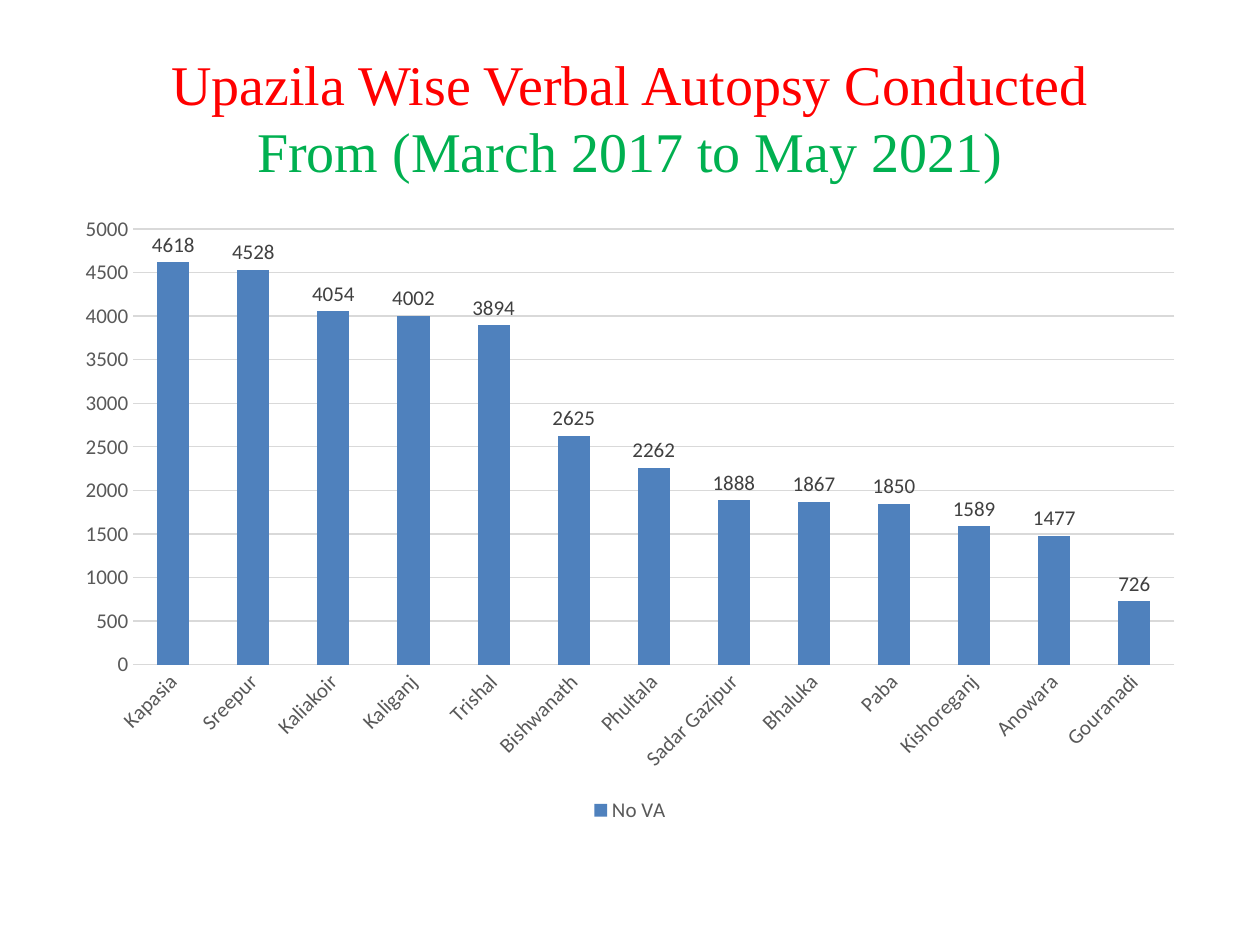
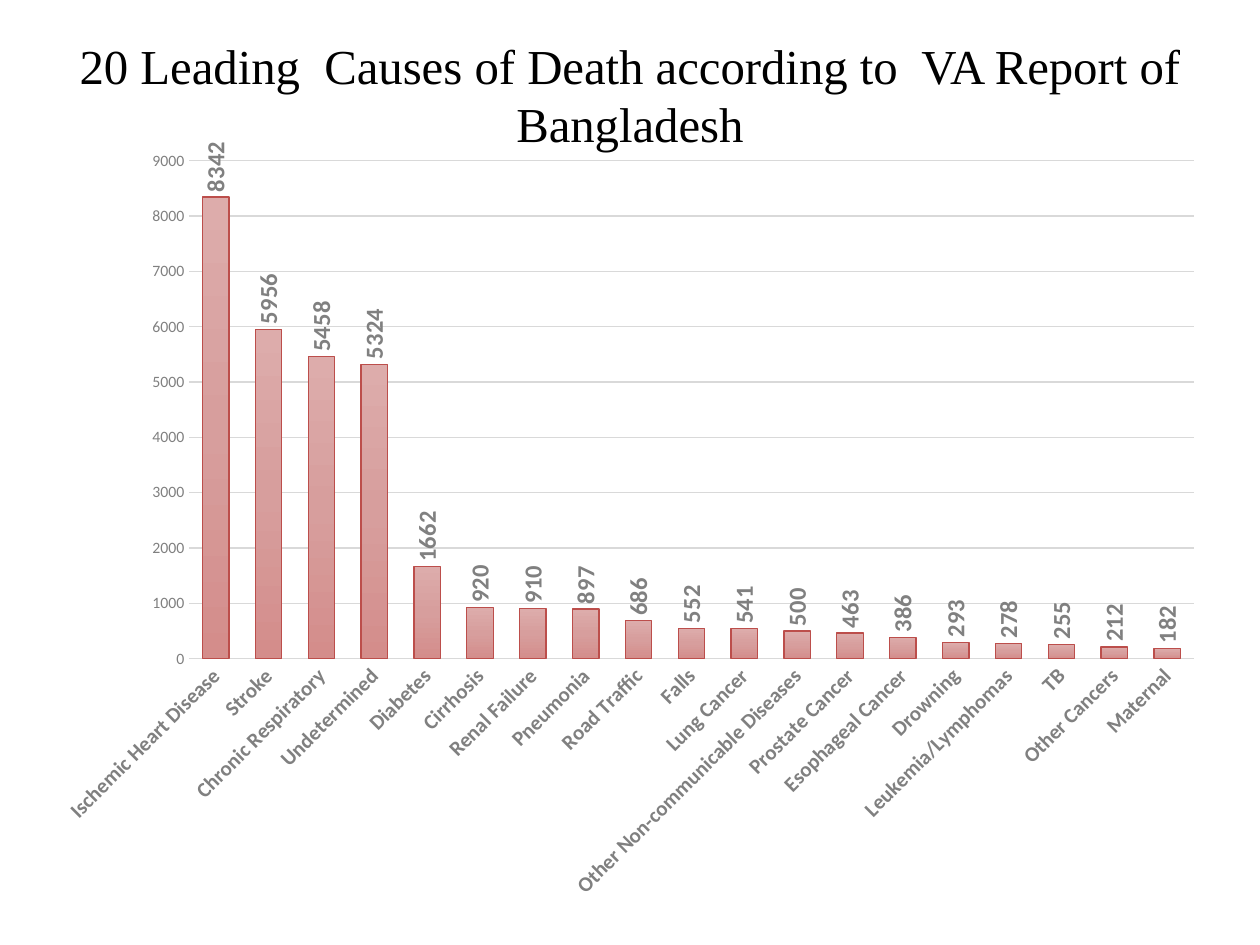
from dataclasses import dataclass
from typing import NamedTuple, Optional

from lxml import etree
from pptx import Presentation
from pptx.chart.data import CategoryChartData
from pptx.dml.color import RGBColor
from pptx.enum.chart import XL_CHART_TYPE, XL_LABEL_POSITION, XL_LEGEND_POSITION, XL_TICK_MARK
from pptx.enum.text import MSO_ANCHOR, PP_ALIGN
from pptx.oxml.ns import qn
from pptx.util import Emu, Pt

COLUMNS = XL_CHART_TYPE.COLUMN_CLUSTERED
OUTSIDE_END = XL_LABEL_POSITION.OUTSIDE_END
BOTTOM = XL_LEGEND_POSITION.BOTTOM
NO_TICK = XL_TICK_MARK.NONE
CENTER = PP_ALIGN.CENTER
MIDDLE = MSO_ANCHOR.MIDDLE

PX = 9144  # 100 px to the inch
TITLE_FONT = "Times New Roman"
CHART_FONT = "Calibri"
COLORS = {
    "red": "FF0000", "green": "00B050", "black": "000000",
    "axis": "595959", "label": "404040", "gray": "808080", "grid": "D9D9D9",
    "blue": "4F81BD", "outline": "BC4E4B",
    "rose_top": "DDACAB", "rose_mid": "D79E9D", "rose_low": "D48D8B",
}


class Box(NamedTuple):
    left: int
    top: int
    width: int
    height: int


class TextStyle(NamedTuple):
    size: float
    color: str
    bold: bool = False


class TitleLine(NamedTuple):
    text: str
    style: TextStyle


@dataclass
class ColumnChart:
    box: Box
    series: str
    values: dict[str, int]
    fills: list[str]  # one colour, or gradient stops from top to bottom
    top_value: int
    step: int
    gap: int
    overlap: int
    category_style: TextStyle
    value_style: TextStyle
    label_style: TextStyle
    label_angle: int = 0
    outline: Optional[str] = None
    base_line: bool = False
    legend: bool = False


def rgb(name: str) -> RGBColor:
    return RGBColor.from_string(COLORS[name])


def emu(box: Box) -> list[Emu]:
    return [Emu(n * PX) for n in box]


def set_font(font, style: TextStyle, name: str = CHART_FONT) -> None:
    font.name = name
    font.size = Pt(style.size)
    font.bold = style.bold
    font.color.rgb = rgb(style.color)


def set_line(line, color: str) -> None:
    line.width = Pt(0.75)
    line.color.rgb = rgb(color)


def rotate_text(part, degrees: int) -> None:
    body = part._element.find(qn("c:txPr")).find(qn("a:bodyPr"))
    body.set("rot", str(degrees * 60000))
    body.set("vert", "horz")


def set_fill(fmt, names: list[str]) -> None:
    if len(names) == 1:
        fmt.fill.solid()
        fmt.fill.fore_color.rgb = rgb(names[0])
        return
    fmt.fill.gradient()
    fmt.fill.gradient_angle = 270  # counter-clockwise: runs downwards
    stops = fmt.fill._xPr.find(qn("a:gradFill")).find(qn("a:gsLst"))
    for old in list(stops):
        stops.remove(old)
    for i, name in enumerate(names):
        position = 100000 * i // (len(names) - 1)
        stop = etree.SubElement(stops, qn("a:gs"), pos=str(position))
        etree.SubElement(stop, qn("a:srgbClr"), val=COLORS[name])


def add_title(s, box: Box, lines: list[TitleLine]) -> None:
    tf = s.shapes.add_textbox(*emu(box)).text_frame
    tf.word_wrap = True
    tf.vertical_anchor = MIDDLE
    tf.margin_top = tf.margin_bottom = 0
    tf.margin_left = tf.margin_right = Emu(5 * PX)
    for i, line in enumerate(lines):
        p = tf.add_paragraph() if i else tf.paragraphs[0]
        p.text = line.text
        p.alignment = CENTER
        set_font(p.font, line.style, TITLE_FONT)


def add_column_chart(s, spec_: ColumnChart) -> None:
    data = CategoryChartData()
    data.categories = list(spec_.values)
    data.add_series(spec_.series, list(spec_.values.values()))
    chart = s.shapes.add_chart(COLUMNS, *emu(spec_.box), data).chart
    set_font(chart.font, TextStyle(10, "black"))
    chart.has_title = False

    # Legend
    chart.has_legend = spec_.legend
    if spec_.legend:
        chart.legend.position = BOTTOM
        chart.legend.include_in_layout = False
        set_font(chart.legend.font, spec_.category_style)

    # Axes
    cat, val = chart.category_axis, chart.value_axis
    for axis, style in ((cat, spec_.category_style), (val, spec_.value_style)):
        axis.major_tick_mark = axis.minor_tick_mark = NO_TICK
        set_font(axis.tick_labels.font, style)
        axis.format.line.fill.background()
    rotate_text(cat, -45)
    if spec_.base_line:
        set_line(cat.format.line, "grid")
    val.minimum_scale, val.maximum_scale = 0, spec_.top_value
    val.major_unit = spec_.step
    val.has_major_gridlines = True
    set_line(val.major_gridlines.format.line, "grid")

    # Columns
    plot = chart.plots[0]
    plot.vary_by_categories = False
    plot.gap_width, plot.overlap = spec_.gap, spec_.overlap
    series = plot.series[0]
    set_fill(series.format, spec_.fills)
    if spec_.outline:
        set_line(series.format.line, spec_.outline)

    # Value labels
    labels = series.data_labels
    labels.show_value = True
    labels.position = OUTSIDE_END
    set_font(labels.font, spec_.label_style)
    rotate_text(labels, spec_.label_angle)


AUTOPSY_TITLE = [
    TitleLine("Upazila Wise Verbal Autopsy Conducted", TextStyle(32, "red")),
    TitleLine("From (March 2017 to May 2021)", TextStyle(32, "green")),
]
AUTOPSIES = ColumnChart(
    box=Box(50, 162, 900, 495),
    series="No VA",
    values={
        "Kapasia": 4618, "Sreepur": 4528, "Kaliakoir": 4054, "Kaliganj": 4002,
        "Trishal": 3894, "Bishwanath": 2625, "Phultala": 2262,
        "Sadar Gazipur": 1888, "Bhaluka": 1867, "Paba": 1850,
        "Kishoreganj": 1589, "Anowara": 1477, "Gouranadi": 726,
    },
    fills=["blue"],
    top_value=5000, step=500, gap=150, overlap=0,
    category_style=TextStyle(12, "axis"),
    value_style=TextStyle(12, "axis"),
    label_style=TextStyle(12, "label"),
    legend=True,
)

CAUSES_TITLE = [
    TitleLine("20 Leading  Causes of Death according to  VA Report of Bangladesh",
              TextStyle(27.9, "black")),
]
CAUSES = ColumnChart(
    box=Box(33, 108, 933, 617),
    series="Series 1",
    values={
        "Ischemic Heart Disease": 8342, "Stroke": 5956,
        "Chronic Respiratory": 5458, "Undetermined": 5324, "Diabetes": 1662,
        "Cirrhosis": 920, "Renal Failure": 910, "Pneumonia": 897,
        "Road Traffic": 686, "Falls": 552, "Lung Cancer": 541,
        "Other Non-communicable Diseases": 500, "Prostate Cancer": 463,
        "Esophageal Cancer": 386, "Drowning": 293, "Leukemia/Lymphomas": 278,
        "TB": 255, "Other Cancers": 212, "Maternal": 182,
    },
    fills=["rose_top", "rose_mid", "rose_low"],
    top_value=9000, step=1000, gap=100, overlap=-24,
    category_style=TextStyle(12, "gray", True),
    value_style=TextStyle(9, "gray"),
    label_style=TextStyle(14, "gray", True),
    label_angle=-90,
    outline="outline",
    base_line=True,
)

SLIDES = [
    (Box(50, 30, 900, 125), AUTOPSY_TITLE, AUTOPSIES),
    (Box(50, 23, 900, 103), CAUSES_TITLE, CAUSES),
]


def main() -> None:
    prs = Presentation()
    prs.slide_width, prs.slide_height = Emu(1000 * PX), Emu(750 * PX)
    blank = prs.slide_layouts[6]
    for title_box, title, chart in SLIDES:
        s = prs.slides.add_slide(blank)
        add_title(s, title_box, title)
        add_column_chart(s, chart)
    prs.save("out.pptx")


if __name__ == "__main__":
    main()
